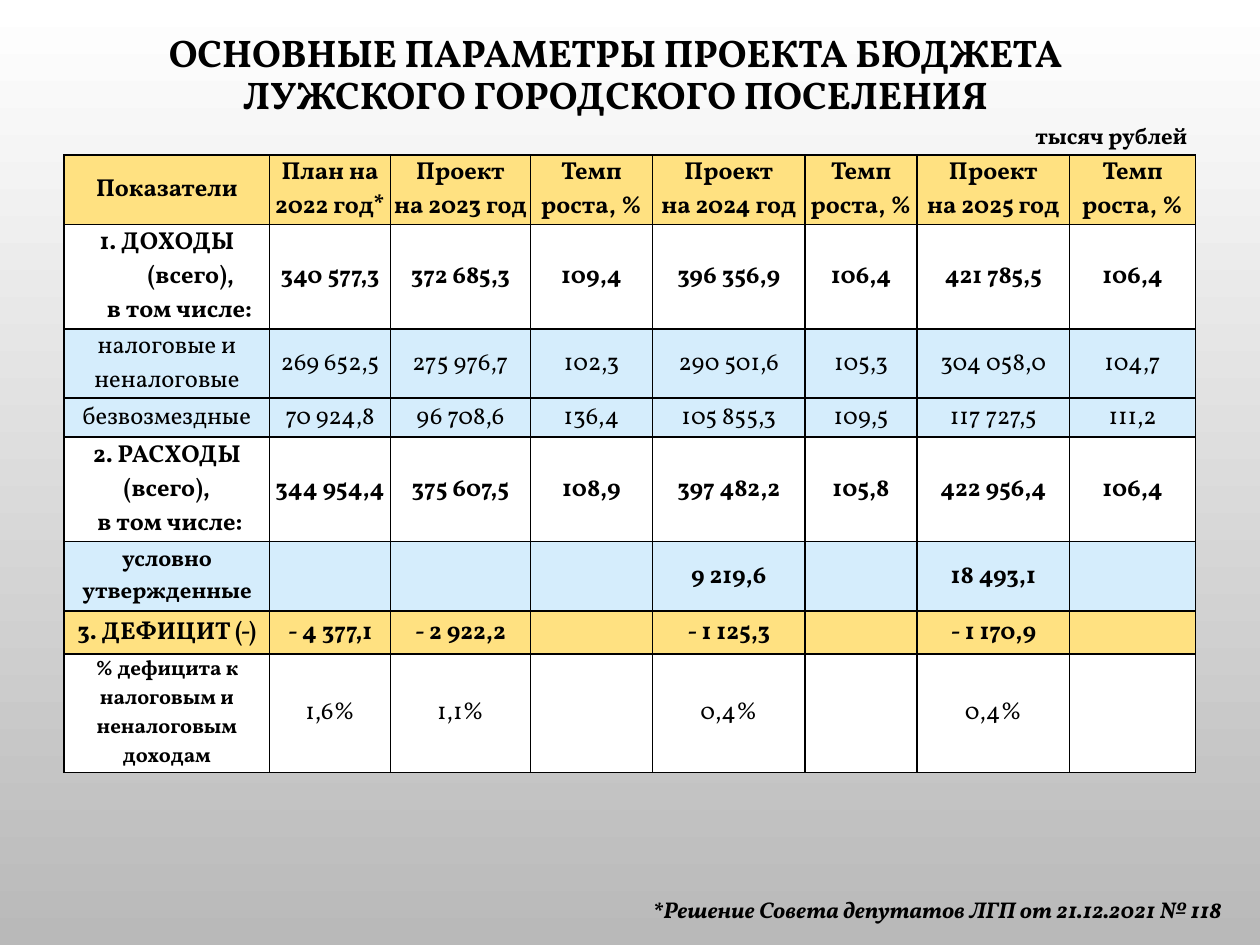
from dataclasses import dataclass

from lxml import etree
from pptx import Presentation
from pptx.dml.color import RGBColor
from pptx.enum.text import MSO_ANCHOR, PP_ALIGN
from pptx.oxml.ns import qn
from pptx.util import Inches, Pt

CENTER, LEFT = PP_ALIGN.CENTER, PP_ALIGN.LEFT
MIDDLE, TOP = MSO_ANCHOR.MIDDLE, MSO_ANCHOR.TOP


@dataclass(frozen=True)
class Theme:
    font: str = "Vollkorn"
    ink: str = "000000"
    white: str = "FFFFFF"
    grey: str = "B9B9B9"
    gold: str = "FFE181"
    blue: str = "D5EDFC"
    title: int = 22
    body: int = 14
    note: int = 13
    small: int = 12
    border: int = 1


T = Theme()
COLS = [1.63, 0.96, 1.11, 0.97, 1.21, 0.89, 1.21, 1]
RATE = "Темп роста, %"
ROWS = [
    (0.55, T.gold, T.body, True, True,
     ["Показатели", "План на 2022 год*", "Проект\nна 2023 год", RATE,
      "Проект\nна 2024 год", RATE, "Проект\nна 2025 год", RATE]),
    (0.83, T.white, T.body, True, True,
     ["1. ДОХОДЫ (всего),\nв том числе:", "340 577,3", "372 685,3", "109,4",
      "396 356,9", "106,4", "421 785,5", "106,4"]),
    (0.55, T.blue, T.body, False, False,
     ["налоговые и неналоговые", "269 652,5", "275 976,7", "102,3",
      "290 501,6", "105,3", "304 058,0", "104,7"]),
    (0.31, T.blue, T.body, False, False,
     ["безвозмездные", "70 924,8", "96 708,6", "136,4",
      "105 855,3", "109,5", "117 727,5", "111,2"]),
    (0.83, T.white, T.body, True, True,
     ["2. РАСХОДЫ (всего),\nв том числе:", "344 954,4", "375 607,5", "108,9",
      "397 482,2", "105,8", "422 956,4", "106,4"]),
    (0.55, T.blue, T.note, True, True,
     ["условно утвержденные", "", "", "", "9 219,6", "", "18 493,1", ""]),
    (0.34, T.gold, T.body, True, True,
     ["3. ДЕФИЦИТ (-)", "- 4 377,1", "- 2 922,2", "",
      "- 1 125,3", "", "- 1 170,9", ""]),
    (0.94, T.white, T.small, True, False,
     ["% дефицита к налоговым и неналоговым доходам", "1,6%", "1,1%", "",
      "0,4%", "", "0,4%", ""]),
]


def rgb(code):
    return RGBColor.from_string(code)


def style(p, size, bold=True, italic=False, align=CENTER):
    p.alignment = align
    f = p.font
    f.name, f.size, f.bold, f.italic = T.font, Pt(size), bold, italic
    f.color.rgb = rgb(T.ink)


def indent(p, margin, first=0):
    pPr = p._p.get_or_add_pPr()
    pPr.set("marL", str(Inches(margin)))
    pPr.set("indent", str(Inches(first)))


def add_background(s):
    fill = s.background.fill
    fill.gradient()
    fill.gradient_angle = 270
    for stop, code in zip(fill.gradient_stops, (T.white, T.grey)):
        stop.color.rgb = rgb(code)


def add_text(prs, s, percents, text, size, anchor=TOP, spacing=None, **kw):
    sides = (prs.slide_width, prs.slide_height) * 2
    box = [int(side * share / 100) for side, share in zip(sides, percents)]
    tf = s.shapes.add_textbox(*box).text_frame
    tf.word_wrap = True
    tf.vertical_anchor = anchor
    p = tf.paragraphs[0]
    p.text = text
    p.line_spacing = spacing
    style(p, size, **kw)


def add_borders(cell):
    tcPr = cell._tc.get_or_add_tcPr()
    for i, tag in enumerate(("a:lnL", "a:lnR", "a:lnT", "a:lnB")):
        ln = etree.Element(qn(tag), w=str(Pt(T.border)))
        fill = etree.SubElement(ln, qn("a:solidFill"))
        etree.SubElement(fill, qn("a:srgbClr"), val=T.ink)
        tcPr.insert(i, ln)


def fill_cell(cell, text, color, size, bold):
    cell.fill.solid()
    cell.fill.fore_color.rgb = rgb(color)
    cell.margin_left = cell.margin_right = cell.margin_top = Inches(0.01)
    cell.margin_bottom = 0
    cell.vertical_anchor = MIDDLE
    cell.text = text
    for p in cell.text_frame.paragraphs:
        style(p, size, bold)
    add_borders(cell)


def add_budget_table(s):
    heights = [row[0] for row in ROWS]
    table = s.shapes.add_table(
        len(ROWS), len(COLS), Inches(0.51), Inches(1.23),
        Inches(sum(COLS)), Inches(sum(heights))).table
    table.first_row = table.horz_banding = False
    for col, width in zip(table.columns, COLS):
        col.width = Inches(width)
    for r, (height, color, size, label_bold, bold, texts) in enumerate(ROWS):
        table.rows[r].height = Inches(height)
        for c, text in enumerate(texts):
            look = (T.body, bold) if c else (size, label_bold)
            fill_cell(table.cell(r, c), text, color, *look)
    income, income_parts = table.cell(1, 0).text_frame.paragraphs
    indent(income, 0.38, -0.38)
    indent(income_parts, 0.2)
    indent(table.cell(4, 0).text_frame.paragraphs[1], 0.05)


def main():
    prs = Presentation()
    prs.slide_width, prs.slide_height = Inches(10), Inches(7.5)
    s = prs.slides.add_slide(prs.slide_layouts[6])
    add_background(s)
    add_text(prs, s, (0.4, 3.8, 96.9, 8.53),
             "ОСНОВНЫЕ ПАРАМЕТРЫ ПРОЕКТА БЮДЖЕТА\vЛУЖСКОГО ГОРОДСКОГО ПОСЕЛЕНИЯ",
             T.title, anchor=MIDDLE, spacing=0.9)
    add_budget_table(s)
    add_text(prs, s, (50.8, 94.13, 48.8, 4.27),
             "*Решение Совета депутатов ЛГП от 21.12.2021 № 118",
             T.note, italic=True, align=LEFT)
    add_text(prs, s, (80.7, 12.27, 15, 4.27), "тысяч рублей", T.note)
    prs.save("out.pptx")


if __name__ == "__main__":
    main()
